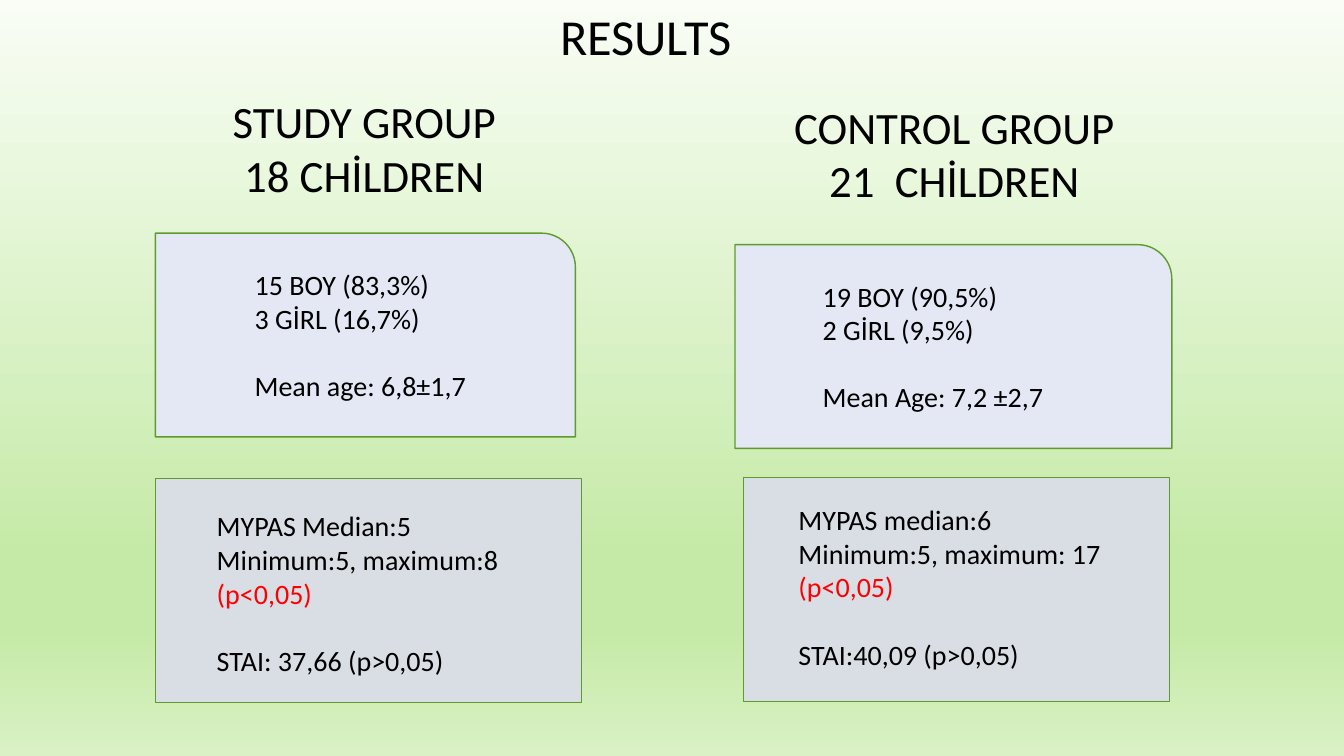
from dataclasses import dataclass

from lxml.etree import SubElement
from pptx import Presentation
from pptx.dml.color import RGBColor
from pptx.enum.shapes import MSO_SHAPE
from pptx.enum.text import MSO_AUTO_SIZE, PP_ALIGN
from pptx.oxml.ns import qn
from pptx.util import Emu, Pt

EMU_PER_PX = 9525


@dataclass(frozen=True)
class Theme:
    font: str = "Calibri"
    text: str = "000000"
    significant: str = "FF0000"
    outline: str = "5E9B2C"
    people_fill: str = "E3E8F4"
    score_fill: str = "D9DEE5"
    background: tuple = ((0, "F9FDF5"), (74, "C5EAA7"), (83, "C5EAA7"), (100, "D9F1C4"))
    title_size: int = 36
    heading_size: int = 32
    body_size: int = 20
    blank_line: int = 24


THEME = Theme()


@dataclass(frozen=True)
class Panel:
    box: tuple
    text_box: tuple  # left and top from the panel corner, then width and height
    lines: tuple
    closing: str
    significance: str = ""


@dataclass(frozen=True)
class Group:
    origin: tuple
    heading_box: tuple
    heading: tuple
    people: Panel
    scores: Panel


# Boxes inside a group are measured from the group's origin
GROUPS = (
    Group(
        (148, 85), (19, 0, 360, 113), ("STUDY GROUP", "18 CHİLDREN"),
        Panel((0, 137, 400, 194), (85, 28, 247, 139),
              ("15 BOY (83,3%)", "3 GİRL (16,7%)"), "Mean age: 6,8±1,7"),
        Panel((0, 371, 406, 213), (49, 24, 301, 171),
              ("MYPAS Median:5", "Minimum:5, maximum:8"),
              "STAI: 37,66 (p>0,05)", "(p<0,05)"),
    ),
    Group(
        (700, 90), (32, 0, 354, 113), ("CONTROL GROUP", "21  CHİLDREN"),
        Panel((0, 143, 416, 194), (74, 28, 286, 139),
              ("19 BOY (90,5%)", "2 GİRL (9,5%)"), "Mean Age: 7,2 ±2,7"),
        Panel((8, 365, 406, 213), (43, 19, 329, 171),
              ("MYPAS median:6", "Minimum:5, maximum: 17"),
              "STAI:40,09 (p>0,05)", "(p<0,05)"),
    ),
)


def px(*lengths):
    return [Emu(length * EMU_PER_PX) for length in lengths]


def within(origin, box):
    return (origin[0] + box[0], origin[1] + box[1], *box[2:])


def add_text(slide, box, lines, size, alignment=PP_ALIGN.LEFT):
    """Each line is (text, colour, space before in points)."""
    frame = slide.shapes.add_textbox(*px(*box)).text_frame
    frame.word_wrap = True
    frame.auto_size = MSO_AUTO_SIZE.SHAPE_TO_FIT_TEXT
    for index, (text, colour, space) in enumerate(lines):
        paragraph = frame.add_paragraph() if index else frame.paragraphs[0]
        paragraph.alignment = alignment
        paragraph.space_before = Pt(space)
        run = paragraph.add_run()
        run.text = text
        run.font.name = THEME.font
        run.font.size = Pt(size)
        run.font.color.rgb = RGBColor.from_string(colour)


def paint_background(slide):
    fill = slide.background.fill
    fill.gradient()
    fill.gradient_angle = 270
    stops = next(slide.element.iter(qn("a:gsLst")))
    for stop in list(stops):
        stops.remove(stop)
    for percent, colour in THEME.background:
        stop = SubElement(stops, qn("a:gs"), pos=str(percent * 1000))
        SubElement(stop, qn("a:srgbClr"), val=colour)


def add_panel(slide, origin, panel, preset, fill):
    box = within(origin, panel.box)
    shape = slide.shapes.add_shape(preset, *px(*box))
    shape.shadow.inherit = False
    shape.fill.solid()
    shape.fill.fore_color.rgb = RGBColor.from_string(fill)
    shape.line.color.rgb = RGBColor.from_string(THEME.outline)
    shape.line.width = Pt(1)

    lines = [(line, THEME.text, 0) for line in panel.lines]
    if panel.significance:
        lines.append((panel.significance, THEME.significant, 0))
    lines.append((panel.closing, THEME.text, THEME.blank_line))
    add_text(slide, within(box, panel.text_box), lines, THEME.body_size)


def add_group(slide, group):
    heading = [(line, THEME.text, 0) for line in group.heading]
    add_text(slide, within(group.origin, group.heading_box), heading,
             THEME.heading_size, PP_ALIGN.CENTER)
    add_panel(slide, group.origin, group.people,
              MSO_SHAPE.ROUND_1_RECTANGLE, THEME.people_fill)
    add_panel(slide, group.origin, group.scores,
              MSO_SHAPE.RECTANGLE, THEME.score_fill)


def add_results_slide(presentation):
    slide = presentation.slides.add_slide(presentation.slide_layouts[6])
    paint_background(slide)
    # Title
    add_text(slide, (524, 0, 257, 68), [("RESULTS", THEME.text, 0)], THEME.title_size)
    # Study and control columns
    for group in GROUPS:
        add_group(slide, group)


def main():
    presentation = Presentation()
    presentation.slide_width, presentation.slide_height = px(1280, 720)
    add_results_slide(presentation)
    presentation.save("out.pptx")


if __name__ == "__main__":
    main()
